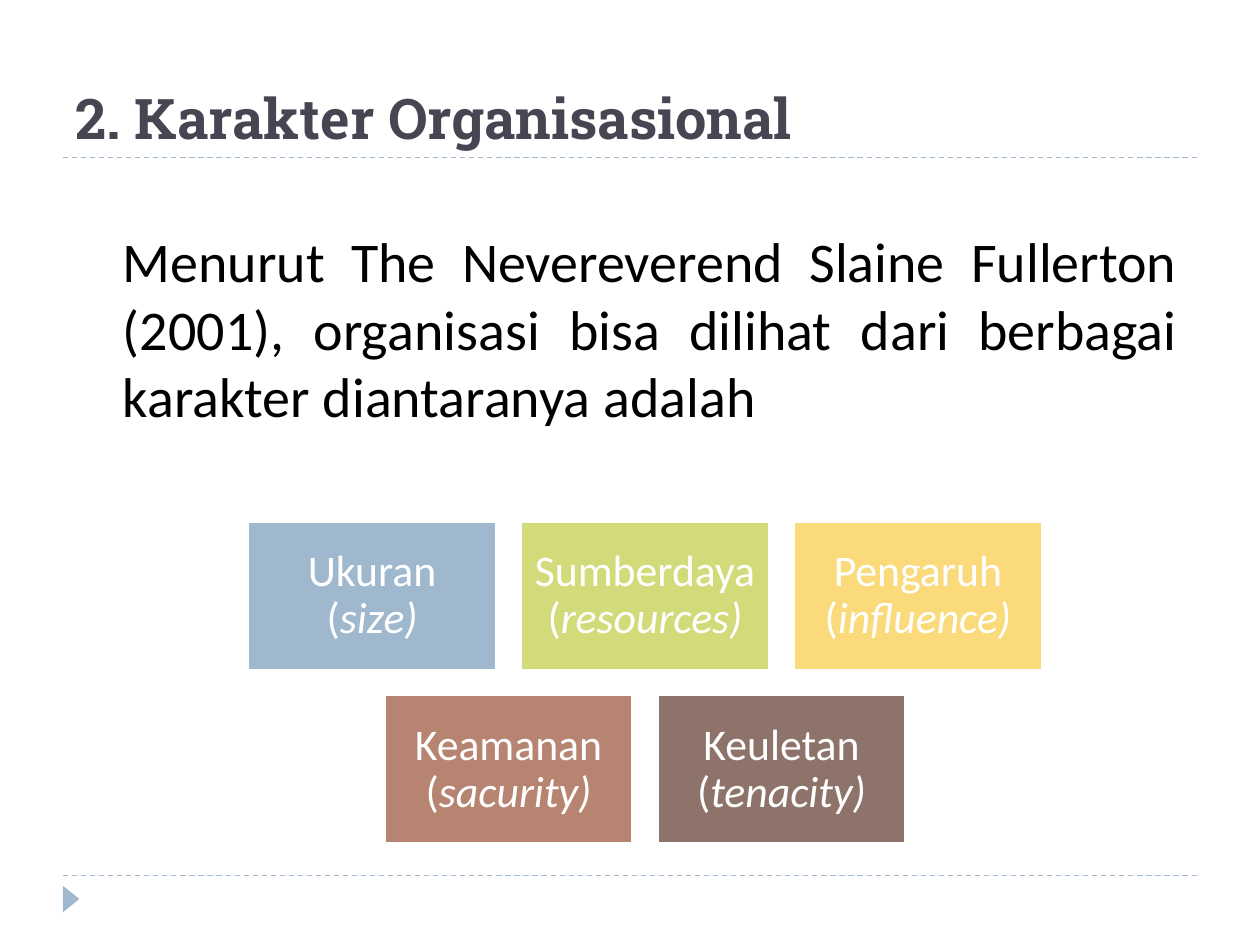
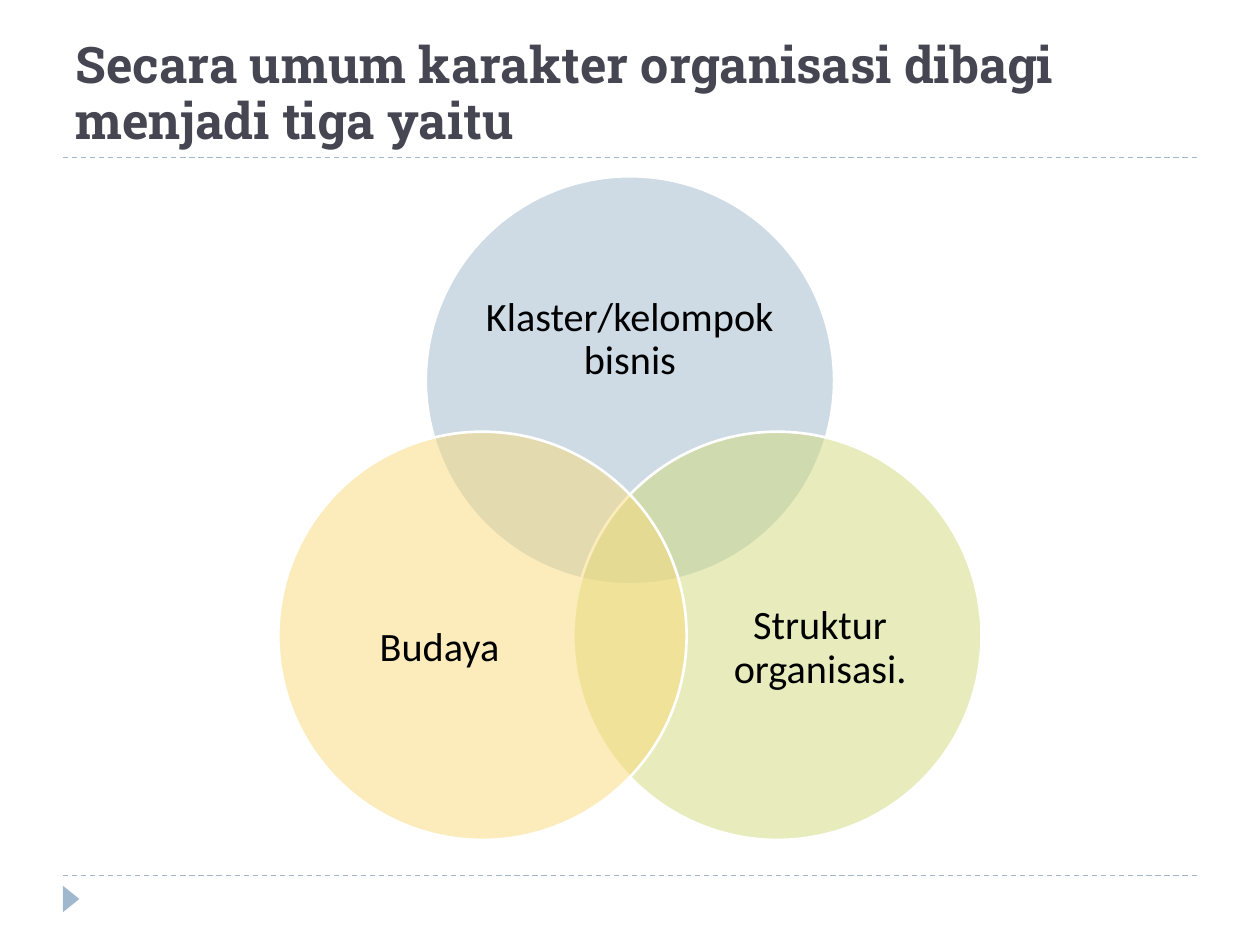
"""Build two slides on the character of organisations."""
from dataclasses import dataclass
from math import cos, radians, sin

from lxml import etree
from pptx import Presentation
from pptx.dml.color import RGBColor
from pptx.enum.dml import MSO_LINE
from pptx.enum.shapes import MSO_CONNECTOR, MSO_SHAPE
from pptx.enum.text import MSO_ANCHOR, MSO_AUTO_SIZE, PP_ALIGN
from pptx.oxml.ns import qn
from pptx.util import Pt

RECT, OVAL, WEDGE = MSO_SHAPE.RECTANGLE, MSO_SHAPE.OVAL, MSO_SHAPE.ISOSCELES_TRIANGLE
LEFT, CENTER, JUSTIFY = PP_ALIGN.LEFT, PP_ALIGN.CENTER, PP_ALIGN.JUSTIFY
MIDDLE, BOTTOM, TOP = MSO_ANCHOR.MIDDLE, MSO_ANCHOR.BOTTOM, MSO_ANCHOR.TOP


@dataclass(frozen=True)
class Theme:
    """Colours, fonts and type sizes."""
    blue: str = "9FB8CD"
    green: str = "D2DA7A"
    yellow: str = "FADA7A"
    rust: str = "B88472"
    brown: str = "8E736A"
    ink: str = "464653"
    black: str = "000000"
    white: str = "FFFFFF"
    head: str = "Roboto Slab"
    text: str = "Calibri"
    title: float = 32
    small: float = 28.8
    body: float = 32
    box: float = 25
    ring: float = 23


T = Theme()

TRAITS = "2. Karakter Organisasional"
INTRO = ("Menurut The Nevereverend Slaine Fullerton (2001), organisasi bisa "
         "dilihat dari berbagai karakter diantaranya adalah")
ROWS = [
    [("Ukuran (", "size)", T.blue),
     ("Sumberdaya (", "resources)", T.green),
     ("Pengaruh (", "influence)", T.yellow)],
    [("Keamanan (", "sacurity)", T.rust),
     ("Keuletan (", "tenacity)", T.brown)],
]

GROUPS = "Secara umum karakter organisasi dibagi menjadi tiga yaitu"
RINGS = [
    ("Klaster/kelompok bisnis", T.blue, (0, -23), (171.4, 105.1)),
    ("Struktur organisasi.", T.green, (24.5, 7.2), (139.7, 128.2)),
    ("Budaya", T.yellow, (-24.5, 7.2), (139.7, 128.2)),
]

RULES = (90, 500.4)
BOX_W, BOX_H, GAP = 141.8, 85, 14.15
GRID_X, GRID_Y = 368.6, 298
HUB_X, HUB_Y, REACH, RING_D = 360, 314.7, 97.3, 233.3


def rgb(code):
    """Turn a hex code into a colour."""
    return RGBColor.from_string(code)


def pts(*nums):
    """Turn numbers into point lengths."""
    return [Pt(n) for n in nums]


def style(par, face, size, color, align, bold=None):
    """Set the font and alignment of a paragraph."""
    font = par.font
    font.name, font.size, font.bold = face, Pt(size), bold
    font.color.rgb = rgb(color)
    par.alignment = align


def setup(frame, anchor, inset=None):
    """Wrap a text frame and set its anchor and insets."""
    frame.word_wrap = True
    frame.auto_size = MSO_AUTO_SIZE.NONE
    frame.vertical_anchor = anchor
    if inset is not None:
        frame.margin_left = frame.margin_right = Pt(inset)
        frame.margin_top = frame.margin_bottom = Pt(inset)


def place(shape, *box):
    """Move and size a placeholder."""
    shape.left, shape.top, shape.width, shape.height = pts(*box)


def shade(slide, kind, box, color, edge=True, alpha=None):
    """Add a filled shape with an optional white edge."""
    shape = slide.shapes.add_shape(kind, *pts(*box))
    shape.shadow.inherit = False
    shape.fill.solid()
    shape.fill.fore_color.rgb = rgb(color)
    if edge:
        shape.line.color.rgb = rgb(T.white)
        shape.line.width = Pt(1.5)
    else:
        shape.line.fill.background()
    if alpha:
        tone = shape.fill._xPr.find(".//" + qn("a:srgbClr"))
        etree.SubElement(tone, qn("a:alpha"), val=str(alpha * 1000))
    return shape


def start(deck, layout, title, size, pitch=1.0):
    """Add a slide with its title, dashed rules and corner wedge."""
    slide = deck.slides.add_slide(deck.slide_layouts[layout])
    for y in RULES:
        rule = slide.shapes.add_connector(MSO_CONNECTOR.STRAIGHT, *pts(36, y, 684, y))
        rule.line.color.rgb = rgb(T.blue)
        rule.line.width = Pt(0.75)
        rule.line.dash_style = MSO_LINE.DASH
        etree.SubElement(rule._element.spPr, qn("a:effectLst"))
    shade(slide, WEDGE, (33.1, 509, 15.1, 9.4), T.blue, edge=False).rotation = 90
    head = slide.shapes.title
    place(head, 36, 12.2, 648, 77.8)
    setup(head.text_frame, BOTTOM)
    par = head.text_frame.paragraphs[0]
    par.text = title
    par.line_spacing = pitch
    style(par, T.head, size, T.ink, LEFT, True)
    return slide


def traits(deck):
    """Build the slide with the intro and the grid of traits."""
    slide = start(deck, 1, TRAITS, T.title)
    body = slide.placeholders[1]
    place(body, 36, 126, 644.4, 144)
    setup(body.text_frame, TOP)
    par = body.text_frame.paragraphs[0]
    par.text = INTRO
    style(par, T.text, T.body, T.black, JUSTIFY)
    props = par._p.get_or_add_pPr()
    props.set("marL", str(Pt(27)))
    props.set("indent", "0")
    etree.SubElement(props, qn("a:buNone"))
    props.append(props.find(qn("a:defRPr")))
    for i, row in enumerate(ROWS):
        left = GRID_X - (len(row) * (BOX_W + GAP) - GAP) / 2
        top = GRID_Y + i * (BOX_H + GAP)
        for j, (name, term, color) in enumerate(row):
            box = shade(slide, RECT, (left + j * (BOX_W + GAP), top, BOX_W, BOX_H), color)
            setup(box.text_frame, MIDDLE, 7.2)
            par = box.text_frame.paragraphs[0]
            par.add_run().text = name
            run = par.add_run()
            run.text = term
            run.font.italic = True
            par.line_spacing = 0.9
            style(par, T.text, T.box, T.white, CENTER)


def groups(deck):
    """Build the slide with three overlapping rings."""
    slide = start(deck, 5, GROUPS, T.small, 0.93)
    for i, (name, color, (dx, dy), (wide, high)) in enumerate(RINGS):
        turn = radians(120 * i - 90)
        x, y = HUB_X + REACH * cos(turn), HUB_Y + REACH * sin(turn)
        shade(slide, OVAL, (x - RING_D / 2, y - RING_D / 2, RING_D, RING_D), color, alpha=50)
        label = slide.shapes.add_textbox(
            *pts(x + dx - wide / 2, y + dy - high / 2, wide, high))
        setup(label.text_frame, MIDDLE, 0)
        par = label.text_frame.paragraphs[0]
        par.text = name
        par.line_spacing = 0.9
        style(par, T.text, T.ring, T.black, CENTER)


def main():
    """Build and save the deck."""
    deck = Presentation()
    deck.slide_width, deck.slide_height = pts(720, 540)
    traits(deck)
    groups(deck)
    deck.save("out.pptx")


if __name__ == "__main__":
    main()
